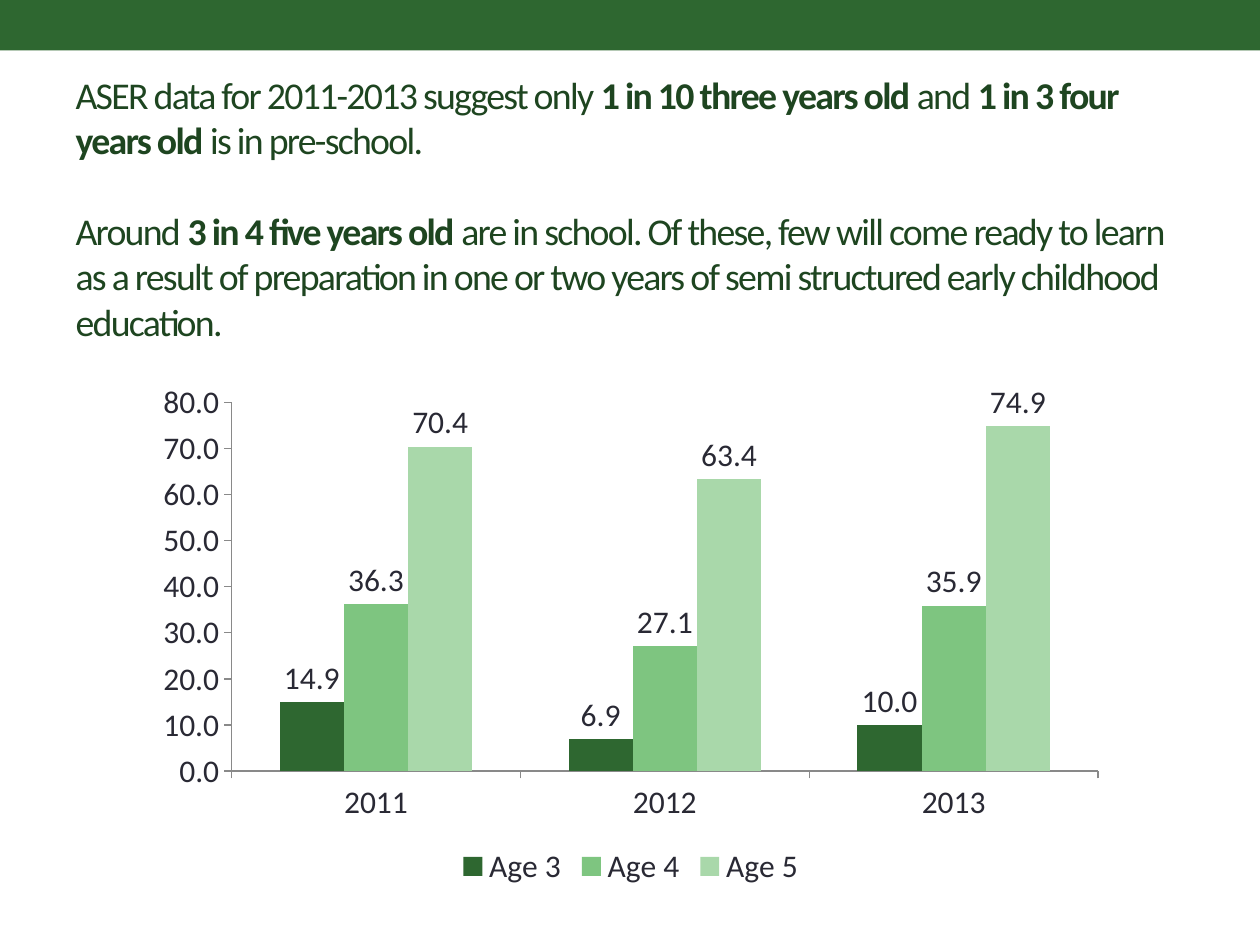
import pptx
import pptx.chart.data
import pptx.dml.color
import pptx.enum.chart
import pptx.enum.shapes
import pptx.enum.text
import pptx.util
from pptx.util import Cm, Pt

COLORS = {
    "band": "2E6730",
    "title": "1E4520",
    "chart_text": "292934",
    "axis": "898989",
    "Age 3": "2E6730",
    "Age 4": "7EC580",
    "Age 5": "A9D8AA",
}
FONT = "Calibri"
LINE = Pt(25.9)

# Each paragraph is a list of (text, bold) runs.
TITLE = [
    [
        ("ASER data for 2011-2013 suggest only ", False),
        ("1 in 10 three years old ", True),
        ("and ", False),
        ("1 in 3 four years old ", True),
        ("is in pre-school.", False),
    ],
    [
        ("Around ", False),
        ("3 in 4 five years old ", True),
        ("are in school. Of these, few will come ready to learn as a result of "
         "preparation in one or two years of semi structured early childhood "
         "education.", False),
    ],
]
YEARS = ["2011", "2012", "2013"]
SERIES = {
    "Age 3": [14.9, 6.9, 10.0],
    "Age 4": [36.3, 27.1, 35.9],
    "Age 5": [70.4, 63.4, 74.9],
}


def rgb(name):
    return pptx.dml.color.RGBColor.from_string(COLORS[name])


def paint(fill, name):
    fill.solid()
    fill.fore_color.rgb = rgb(name)


def format_font(font, size, color):
    font.name = FONT
    font.size = Pt(size)
    font.color.rgb = rgb(color)


def add_run(p, text, size=21.6, color="title", bold=False, spacing=-1):
    """Append a formatted run; spacing is the letter spacing in points."""
    r = p.add_run()
    r.text = text
    format_font(r.font, size, color)
    r.font.bold = bold
    r._r.get_or_add_rPr().set("spc", str(round(spacing * 100)))


def add_band(s):
    sp = s.shapes.add_shape(pptx.enum.shapes.MSO_SHAPE.RECTANGLE,
                            0, 0, Cm(25.4), Cm(1.02))
    sp.shadow.inherit = False
    paint(sp.fill, "band")
    sp.line.fill.background()


def fill_title(s):
    sp = s.shapes.title
    sp.left, sp.top, sp.width, sp.height = Cm(1.27), Cm(1.47), Cm(22.86), Cm(5.44)
    tf = sp.text_frame
    tf.word_wrap = True
    tf.auto_size = pptx.enum.text.MSO_AUTO_SIZE.NONE
    tf.vertical_anchor = pptx.enum.text.MSO_ANCHOR.MIDDLE
    for i, runs in enumerate(TITLE):
        p = tf.add_paragraph() if i else tf.paragraphs[0]
        p.alignment = pptx.enum.text.PP_ALIGN.LEFT
        p.line_spacing = LINE
        p.space_before = LINE if i else Pt(0)
        for text, bold in runs:
            add_run(p, text, bold=bold)


def style_axis(axis):
    axis.has_major_gridlines = False
    axis.major_tick_mark = pptx.enum.chart.XL_TICK_MARK.OUTSIDE
    axis.minor_tick_mark = pptx.enum.chart.XL_TICK_MARK.NONE
    axis.format.line.color.rgb = rgb("axis")
    axis.format.line.width = Pt(0.75)


def add_column_chart(s):
    data = pptx.chart.data.CategoryChartData(number_format="0.0")
    data.categories = YEARS
    for name, values in SERIES.items():
        data.add_series(name, values)
    chart = s.shapes.add_chart(
        pptx.enum.chart.XL_CHART_TYPE.COLUMN_CLUSTERED,
        Cm(2.9), Cm(7.52), Cm(19.63), Cm(10.46), data).chart
    format_font(chart.font, 18, "chart_text")
    chart.has_title = False
    chart.has_legend = True
    chart.legend.position = pptx.enum.chart.XL_LEGEND_POSITION.BOTTOM
    chart.legend.include_in_layout = False

    style_axis(chart.category_axis)
    style_axis(chart.value_axis)
    chart.value_axis.minimum_scale = 0
    chart.value_axis.maximum_scale = 80
    chart.value_axis.major_unit = 10
    chart.value_axis.tick_labels.number_format = "0.0"
    chart.value_axis.tick_labels.number_format_is_linked = False

    plot = chart.plots[0]
    plot.gap_width = 150
    plot.overlap = 0
    plot.vary_by_categories = False
    for series in plot.series:
        paint(series.format.fill, series.name)
        labels = series.data_labels
        labels.show_value = True
        labels.number_format = "0.0"
        labels.number_format_is_linked = False
        labels.position = pptx.enum.chart.XL_LABEL_POSITION.OUTSIDE_END


def main():
    prs = pptx.Presentation()
    prs.slide_width, prs.slide_height = Cm(25.4), Cm(19.05)
    s = prs.slides.add_slide(prs.slide_layouts.get_by_name("Title Only"))
    add_band(s)
    fill_title(s)
    add_column_chart(s)
    prs.save("out.pptx")


if __name__ == "__main__":
    main()
